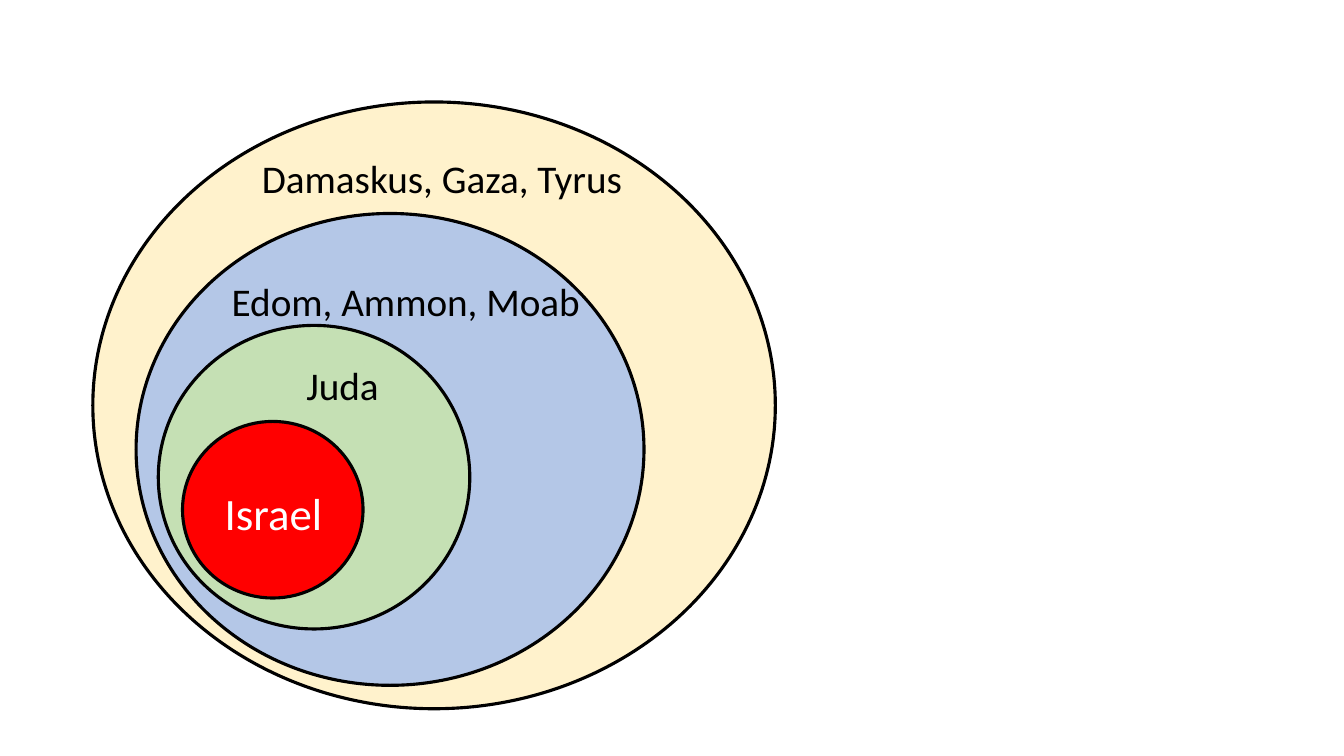
from pptx import Presentation
from pptx import util as u
from pptx.dml.color import RGBColor
from pptx.enum import shapes, text

BLACK = RGBColor(0x00, 0x00, 0x00)
WHITE = RGBColor(0xFF, 0xFF, 0xFF)
CREAM = RGBColor(0xFF, 0xF2, 0xCC)
BLUE = RGBColor(0xB4, 0xC7, 0xE7)
GREEN = RGBColor(0xC5, 0xE0, 0xB4)
RED = RGBColor(0xFF, 0x00, 0x00)

# Offsets from the diagram's corner and sizes, in cm
RINGS = [
    ((0, 0, 17.2, 15.29), CREAM),
    ((1.09, 2.81, 12.8, 11.89), BLUE),
    ((1.65, 5.63, 7.85, 7.65), GREEN),
    ((2.26, 8.05, 4.55, 4.45), RED),
]
LABELS = [
    ((4.01, 1.19, 9.96, 1.45), "Damaskus, Gaza, Tyrus", {}),
    ((3.25, 4.29, 11.07, 1.45), "Edom, Ammon, Moab", {}),
    ((5.13, 6.42, 2.67, 1.45), "Juda", {}),
    ((3.07, 9.55, 3.07, 1.63), "Israel", {"size": 32, "color": WHITE}),
]


def place(origin, box):
    """Turn a box relative to origin into slide lengths."""
    left, top, width, height = box
    return [u.Cm(n) for n in (origin[0] + left, origin[1] + top, width, height)]


def add_ring(page, position, color):
    ring = page.shapes.add_shape(shapes.MSO_SHAPE.OVAL, *position)
    ring.shadow.inherit = False
    ring.fill.solid()
    ring.fill.fore_color.rgb = color
    ring.line.color.rgb = BLACK
    ring.line.width = u.Pt(2.25)


def add_label(page, position, words, size=28, color=BLACK, font="Calibri"):
    frame = page.shapes.add_textbox(*position).text_frame
    frame.word_wrap = True
    frame.auto_size = text.MSO_AUTO_SIZE.SHAPE_TO_FIT_TEXT
    span = frame.paragraphs[0].add_run()
    span.text = words
    span.font.name = font
    span.font.size = u.Pt(size)
    span.font.color.rgb = color


def add_nested_circles(page, origin):
    for box, color in RINGS:
        add_ring(page, place(origin, box), color)
    for box, words, style in LABELS:
        add_label(page, place(origin, box), words, **style)


def main():
    deck = Presentation()
    deck.slide_width, deck.slide_height = u.Cm(33.87), u.Cm(19.05)
    page = deck.slides.add_slide(deck.slide_layouts[6])
    add_nested_circles(page, origin=(2.34, 2.57))
    deck.save("out.pptx")


if __name__ == "__main__":
    main()
